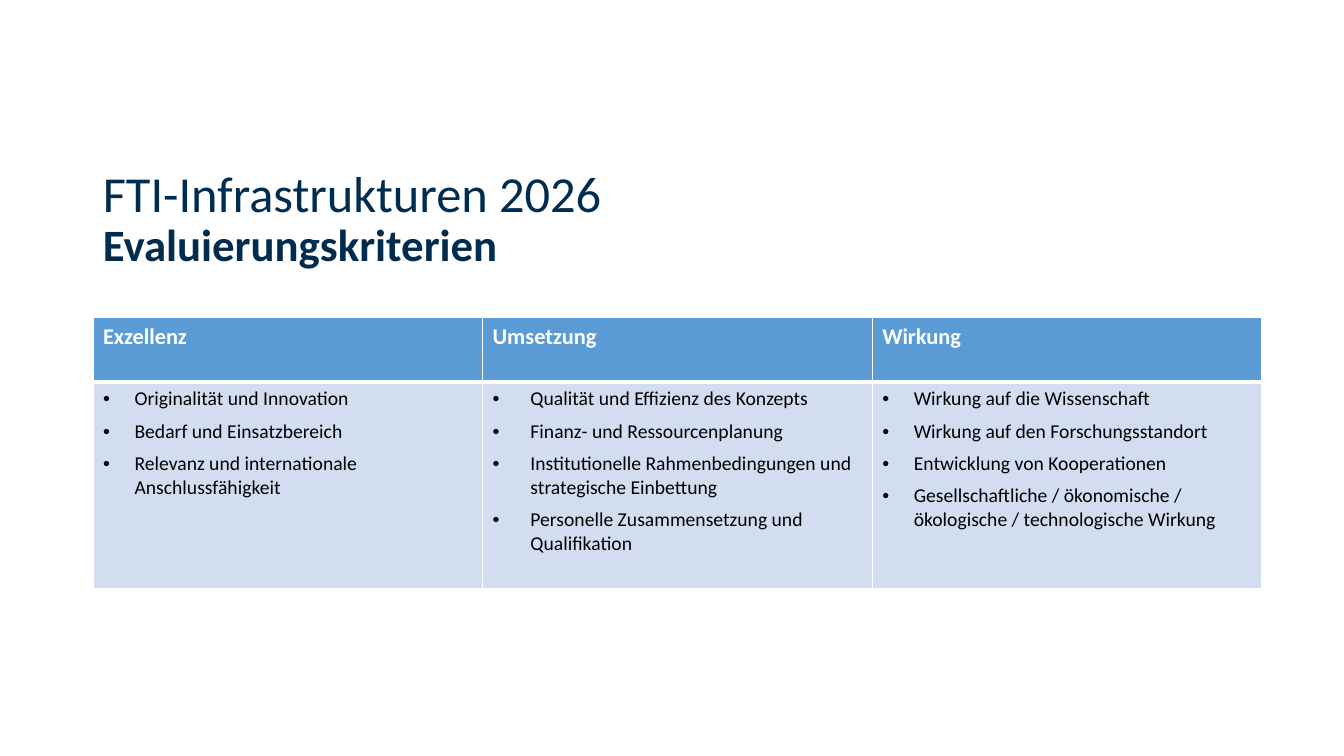
from dataclasses import dataclass

from pptx import Presentation
from pptx.dml.color import RGBColor as Rgb
from pptx.enum.text import MSO_ANCHOR as Anchor
from pptx.oxml import parse_xml
from pptx.oxml.ns import nsdecls
from pptx.util import Pt


@dataclass
class Theme:
    face: str = "Calibri"
    navy: str = "002C50"
    blue: str = "5B9BD5"
    pale: str = "D2DEEF"
    white: str = "FFFFFF"
    black: str = "000000"
    title: int = 36
    sub: int = 32
    head: int = 16
    body: int = 14


theme = Theme()


def write(para, text, size, color, bold=False):
    run = para.add_run()
    run.text = text
    form = {"name": theme.face, "size": Pt(size), "bold": bold}
    for key, value in form.items():
        setattr(run.font, key, value)
    run.font.color.rgb = Rgb.from_string(color)


def paint(cell, color, edges):
    props = cell._tc.get_or_add_tcPr()
    for side, width in edges.items():
        props.append(parse_xml(
            f'<a:ln{side} {nsdecls("a")} w="{Pt(width)}"><a:solidFill>'
            f'<a:srgbClr val="{theme.white}"/></a:solidFill></a:ln{side}>'))
    cell.fill.solid()
    cell.fill.fore_color.rgb = Rgb.from_string(color)


deck = Presentation()
deck.slide_width, deck.slide_height = Pt(960), Pt(540)
slide = deck.slides.add_slide(deck.slide_layouts[6])

left = Pt(66.4)
frame = slide.shapes.add_textbox(left, Pt(105), Pt(690), Pt(104.4)).text_frame
for key, value in {"word_wrap": True, "vertical_anchor": Anchor.MIDDLE}.items():
    setattr(frame, key, value)
para = frame.paragraphs[0]
para.line_spacing = 0.9
write(para, "FTI-Infrastrukturen 2026", theme.title, theme.navy)
para.add_line_break()
write(para, "Evaluierungskriterien", theme.sub, theme.navy, True)

groups = [
    ("Exzellenz", 22.5, [
        "Originalität und Innovation",
        "Bedarf und Einsatzbereich",
        "Relevanz und internationale Anschlussfähigkeit"]),
    ("Umsetzung", 27, [
        "Qualität und Effizienz des Konzepts",
        "Finanz- und Ressourcenplanung",
        "Institutionelle Rahmenbedingungen und strategische Einbettung",
        "Personelle Zusammensetzung und Qualifikation"]),
    ("Wirkung", 22.5, [
        "Wirkung auf die Wissenschaft",
        "Wirkung auf den Forschungsstandort",
        "Entwicklung von Kooperationen",
        "Gesellschaftliche / ökonomische / ökologische / technologische Wirkung"]),
]
rows = [46, 147.5]
grid = slide.shapes.add_table(
    len(rows), len(groups), left, Pt(227), Pt(835), Pt(sum(rows))).table
for row, height in zip(grid.rows, rows):
    row.height = Pt(height)

for col, (head, indent, points) in enumerate(groups):
    top, cell = grid.cell(0, col), grid.cell(1, col)
    paint(top, theme.blue, {"L": 1, "R": 1, "T": 1, "B": 3})
    paint(cell, theme.pale, {"L": 1, "R": 1, "T": 3, "B": 1})
    write(top.text_frame.paragraphs[0], head, theme.head, theme.white, True)
    frame = cell.text_frame
    for rank, point in enumerate(points):
        para = frame.add_paragraph() if rank else frame.paragraphs[0]
        props = para._p.get_or_add_pPr()
        for key, value in {"marL": indent, "indent": -indent}.items():
            props.set(key, str(Pt(value)))
        for mark in ('buFont {} typeface="Arial"', 'buChar {} char="•"'):
            props.append(parse_xml(f'<a:{mark.format(nsdecls("a"))}/>'))
        space = {"space_before": Pt(3 if rank else 0), "space_after": Pt(3)}
        for key, value in space.items():
            setattr(para, key, value)
        write(para, point, theme.body, theme.black)

deck.save("out.pptx")
